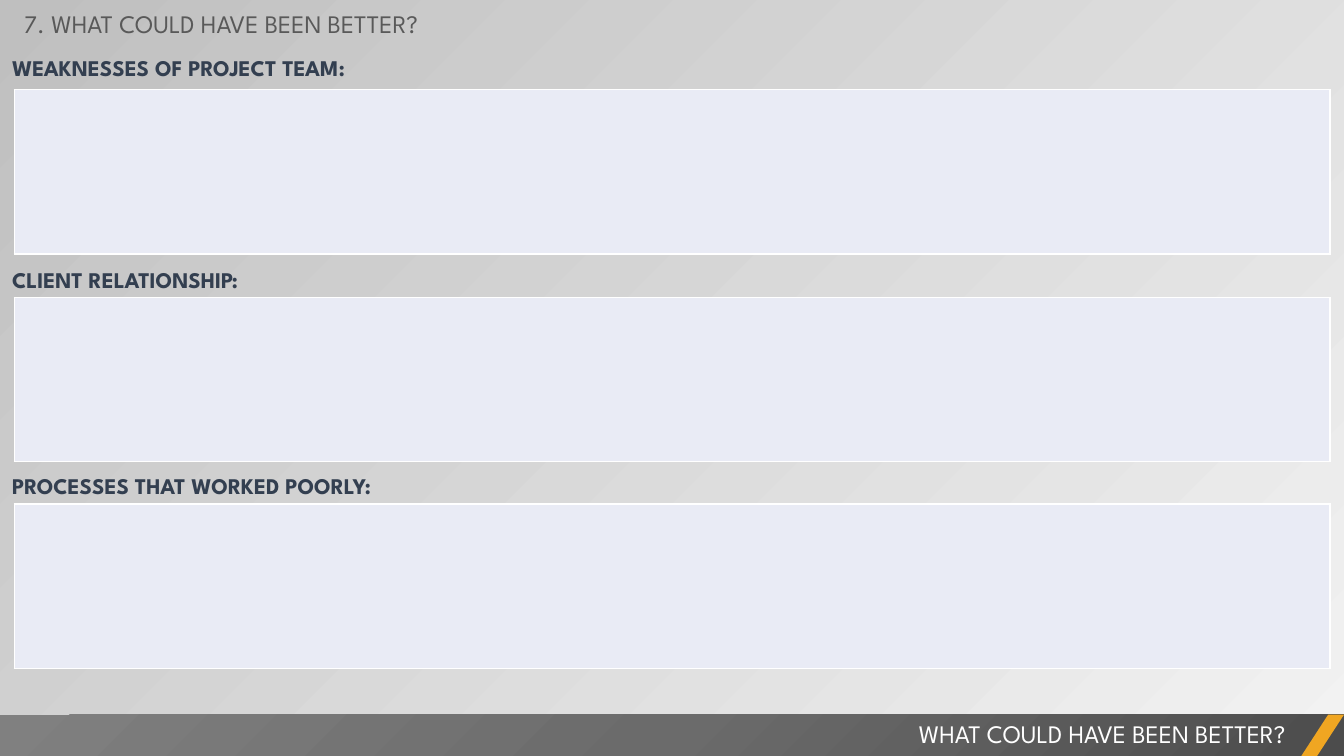
from lxml import etree
from pptx import Presentation
from pptx.dml.color import RGBColor as RGB
from pptx.enum.shapes import MSO_SHAPE as SHAPE
from pptx.enum.text import MSO_ANCHOR as ANCHOR, MSO_AUTO_SIZE as AUTO, PP_ALIGN as ALIGN
from pptx.oxml import parse_xml
from pptx.oxml.ns import nsdecls, qn
from pptx.util import Inches, Pt

FONT = "League Spartan"
WHITE = RGB(0xFF, 0xFF, 0xFF)
PALE = RGB(0xF2, 0xF2, 0xF2)
SILVER = RGB(0xBF, 0xBF, 0xBF)
GREY = RGB(0x59, 0x59, 0x59)
NAVY = RGB(0x33, 0x3F, 0x50)
ICE = RGB(0xE9, 0xEB, 0xF5)
AMBER = RGB(0xF0, 0xA6, 0x22)
# Footer gradient: position in percent, colour
SHADES = [(0, RGB(0x4C, 0x4C, 0x4C)), (50, RGB(0x6B, 0x6B, 0x6B)),
          (100, RGB(0x80, 0x80, 0x80))]

HEAD = "WHAT COULD HAVE BEEN BETTER?"
# Label, label top, box top, line spacing
PARTS = [
    ("WEAKNESSES OF PROJECT TEAM:", 0.45, 0.89, Pt(21.5)),
    ("CLIENT RELATIONSHIP:", 2.55, 2.95, Pt(21.5)),
    ("PROCESSES THAT WORKED POORLY:", 4.57, 5, 1.2),
]


def place(shape, left, top, width, height):
    shape.left, shape.top = Inches(left), Inches(top)
    shape.width, shape.height = Inches(width), Inches(height)


def write(shape, text, size, color, bold=False, align=ALIGN.LEFT):
    frame = shape.text_frame
    frame.text = text
    frame.word_wrap = True
    frame.auto_size = AUTO.SHAPE_TO_FIT_TEXT
    frame.vertical_anchor = ANCHOR.TOP
    para = frame.paragraphs[0]
    para.alignment = align
    font = para.runs[0].font
    font.name, font.size, font.bold = FONT, Pt(size), bold
    font.color.rgb = color
    return frame


def add_text(slide, box, text, size, color, **style):
    shape = slide.shapes.add_textbox(*map(Inches, box))
    return write(shape, text, size, color, **style)


def add_label(slide, text, top, space):
    frame = add_text(slide, (0, top, 7.63, 0.4), text, 16, NAVY, bold=True)
    frame.margin_left = frame.margin_right = Inches(0.12)
    frame.margin_top = frame.margin_bottom = Inches(0.06)
    para = frame.paragraphs[0]
    para.line_spacing = space
    para.space_before = Pt(3.2)


def add_box(slide, top):
    """Empty one-cell table with a thin white border."""
    area = map(Inches, (0.14, top, 13.05, 1.63))
    table = slide.shapes.add_table(1, 1, *area).table
    table.first_row = table.horz_banding = False
    cell = table.cell(0, 0)
    props = cell._tc.get_or_add_tcPr()
    for side in ("a:lnL", "a:lnR", "a:lnT", "a:lnB"):
        line = etree.SubElement(props, qn(side), w=str(Pt(1)))
        fill = etree.SubElement(line, qn("a:solidFill"))
        etree.SubElement(fill, qn("a:srgbClr"), val=str(WHITE))
    cell.fill.solid()
    cell.fill.fore_color.rgb = ICE


def add_shape(slide, kind, box):
    shape = slide.shapes.add_shape(kind, *map(Inches, box))
    shape.shadow.inherit = False
    shape.line.fill.background()
    shape.fill.solid()
    return shape


def shade(shape):
    """Radial gradient centred on the bottom right corner."""
    stops = "".join(
        f'<a:gs pos="{pos * 1000}"><a:srgbClr val="{color}"/></a:gs>'
        for pos, color in SHADES)
    grad = parse_xml(
        f'<a:gradFill {nsdecls("a")} rotWithShape="1"><a:gsLst>{stops}</a:gsLst>'
        '<a:path path="circle"><a:fillToRect l="100000" t="100000"/></a:path>'
        '</a:gradFill>')
    props = shape._element.spPr
    props.replace(props.find(qn("a:solidFill")), grad)


def set_back(slide):
    fill = slide.background.fill
    fill.gradient()
    fill.gradient_angle = 135
    for stop, color in zip(fill.gradient_stops, (PALE, SILVER)):
        stop.color.rgb = color
    fill.gradient_stops[0].position = 0
    fill.gradient_stops[1].position = 1


def add_footer(slide):
    shade(add_shape(slide, SHAPE.RECTANGLE, (0, 7.09, 13.33, 0.42)))
    add_text(slide, (5.25, 7.08, 7.6, 0.4), HEAD, 18, WHITE, align=ALIGN.RIGHT)
    slash = add_shape(slide, SHAPE.PARALLELOGRAM, (12.9, 7.09, 0.43, 0.42))
    slash.adjustments[0] = 0.65
    slash.fill.fore_color.rgb = AMBER


def main():
    deck = Presentation()
    deck.slide_width, deck.slide_height = Inches(13.33), Inches(7.5)
    slide = deck.slides.add_slide(deck.slide_layouts[5])
    set_back(slide)

    # Title
    title = slide.shapes.title
    place(title, 0.14, 0.03, 5.31, 0.4)
    write(title, "7. " + HEAD, 18, GREY)

    # Labelled answer boxes
    for text, top, box_top, space in PARTS:
        add_box(slide, box_top)
        add_label(slide, text, top, space)

    add_footer(slide)
    deck.save("out.pptx")


if __name__ == "__main__":
    main()
